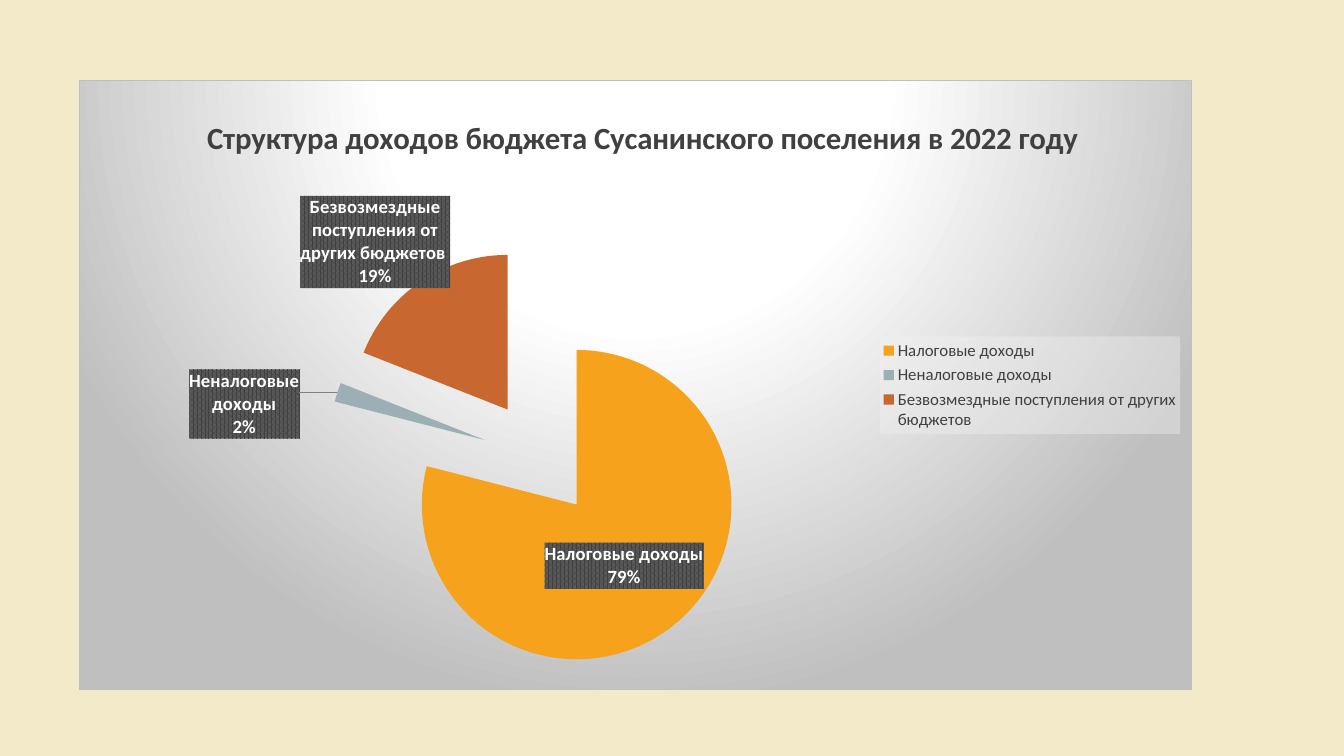
from copy import deepcopy
from dataclasses import dataclass

from lxml.etree import QName
from pptx import Presentation
from pptx.chart.data import CategoryChartData
from pptx.dml.color import RGBColor
from pptx.enum.chart import XL_CHART_TYPE as ChartType
from pptx.enum.chart import XL_LABEL_POSITION as LabelPosition
from pptx.enum.chart import XL_LEGEND_POSITION as LegendPosition
from pptx.oxml import parse_xml
from pptx.oxml.ns import nsdecls, qn
from pptx.util import Inches, Pt

COLOURS = {
    "background": "F2EAC8", "text": "404040", "white": "FFFFFF", "black": "000000",
    "grey": "BFBFBF", "legend": "F2F2F2", "hatch": "595959", "leader": "808080",
    "tax": "F6A21D", "non_tax": "9BAFB5", "grants": "C96731",
}
FONT = "Calibri"
TITLE = "Структура доходов бюджета Сусанинского поселения в 2022 году"
EXPLOSION = 38

CHART_FILL = f"""<a:gradFill><a:gsLst>
  <a:gs pos="0"><a:srgbClr val="{COLOURS['white']}"/></a:gs>
  <a:gs pos="39000"><a:srgbClr val="{COLOURS['white']}"/></a:gs>
  <a:gs pos="100000"><a:srgbClr val="{COLOURS['grey']}"/></a:gs></a:gsLst>
  <a:path path="circle"><a:fillToRect l="50000" t="-80000" r="50000" b="180000"/></a:path>
</a:gradFill>
<a:ln w="9525"><a:solidFill><a:srgbClr val="{COLOURS['grey']}"/></a:solidFill></a:ln>"""
LEGEND_FILL = f"""<a:solidFill><a:srgbClr val="{COLOURS['legend']}">
  <a:alpha val="39000"/></a:srgbClr></a:solidFill>"""
LABEL_FILL = f"""<a:pattFill prst="pct75">
  <a:fgClr><a:srgbClr val="{COLOURS['text']}"/></a:fgClr>
  <a:bgClr><a:srgbClr val="{COLOURS['hatch']}"/></a:bgClr></a:pattFill>"""
LEADER_LINE = f"""<a:ln w="9525"><a:solidFill>
  <a:srgbClr val="{COLOURS['leader']}"/></a:solidFill></a:ln>"""


@dataclass
class Area:
    """Place in the chart, as fractions of its width and height."""
    x: float
    y: float
    width: float | None = None
    height: float | None = None


@dataclass
class Income:
    name: str
    share: int
    colour: str
    label: Area | None = None


INCOMES = [
    Income("Налоговые доходы", 79, "tax"),
    Income("Неналоговые доходы", 2, "non_tax", Area(-0.15, -0.02, 0.1, 0.11)),
    Income("Безвозмездные поступления от других бюджетов ", 19, "grants",
           Area(-0.08, -0.17, 0.14, 0.15)),
]


def colour(name: str) -> RGBColor:
    return RGBColor.from_string(COLOURS[name])


def format_font(font, *, size: float, color: str, bold: bool = False) -> None:
    font.name, font.size, font.bold = FONT, Pt(size), bold
    font.color.rgb = colour(color)


def chart_element(tag: str, content: str = "", attributes: str = ""):
    return parse_xml(f"<c:{tag} {nsdecls('c', 'a')} {attributes}>{content}</c:{tag}>")


def layout_element(area: Area, fixed: bool = True, inner: bool = False):
    """Fixed places count from the chart corner, others from the default place."""
    content = '<c:layoutTarget val="inner"/>' if inner else ""
    if fixed:
        content += '<c:xMode val="edge"/><c:yMode val="edge"/>'
    content += f'<c:x val="{area.x}"/><c:y val="{area.y}"/>'
    if fixed and area.width:
        content += f'<c:w val="{area.width}"/><c:h val="{area.height}"/>'
    return chart_element("layout", f"<c:manualLayout>{content}</c:manualLayout>")


def place(parent, area: Area, after: str | None = None, inner: bool = False) -> None:
    for old_layout in parent.findall(qn("c:layout")):
        parent.remove(old_layout)
    layout = layout_element(area, inner=inner)
    if after:
        parent.find(qn(after)).addnext(layout)
    else:
        parent.insert(0, layout)


def moved_label(labels, index: int, area: Area):
    """Label of one slice with the shared format and its own place and size."""
    label = chart_element("dLbl", f'<c:idx val="{index}"/>')
    label.append(layout_element(area, fixed=False))
    for child in labels:
        if QName(child).localname not in ("dLbl", "showLeaderLines", "leaderLines"):
            label.append(deepcopy(child))
    size = f'<c:w val="{area.width}"/><c:h val="{area.height}"/>'
    label.append(chart_element("extLst", f"""<c:ext
        uri="{{CE6537A1-D6FC-4f65-9D91-7224C49458BB}}"
        xmlns:c15="http://schemas.microsoft.com/office/drawing/2012/chart">
        <c15:layout><c:manualLayout>{size}</c:manualLayout></c15:layout></c:ext>"""))
    return label


def format_title(chart) -> None:
    chart.has_title = True
    paragraph = chart.chart_title.text_frame.paragraphs[0]
    run = paragraph.add_run()
    run.text = TITLE
    format_font(run.font, size=22, color="text", bold=True)
    place(chart.chart_title._element, Area(0.11, 0.05), after="c:tx")


def format_legend(chart) -> None:
    chart.has_legend = True
    legend = chart.legend
    legend.position = LegendPosition.RIGHT
    legend.include_in_layout = False
    format_font(legend.font, size=12, color="text")
    place(legend._element, Area(0.72, 0.42, 0.27, 0.16), after="c:legendPos")
    legend._element.find(qn("c:overlay")).addnext(chart_element("spPr", LEGEND_FILL))


def format_slices(series) -> None:
    for index, income in enumerate(INCOMES):
        fill = series.points[index].format.fill
        fill.solid()
        fill.fore_color.rgb = colour(income.colour)
    explosion = chart_element("explosion", attributes=f'val="{EXPLOSION}"')
    series._element.find(qn("c:tx")).addnext(explosion)


def format_labels(series) -> None:
    data_labels = series.data_labels
    data_labels.show_value = False
    data_labels.show_category_name = True
    data_labels.show_percentage = True
    data_labels.number_format = "0%"
    data_labels.number_format_is_linked = False
    data_labels.position = LabelPosition.CENTER
    format_font(data_labels.font, size=13.3, color="white", bold=True)

    labels = data_labels._element
    labels.find(qn("c:numFmt")).addnext(chart_element("spPr", LABEL_FILL))
    for old_leader in labels.findall(qn("c:showLeaderLines")):
        labels.remove(old_leader)
    labels.append(chart_element("separator", "\n"))
    labels.append(chart_element("showLeaderLines", attributes='val="1"'))
    labels.append(chart_element("leaderLines", f"<c:spPr>{LEADER_LINE}</c:spPr>"))
    moved = [moved_label(labels, index, income.label)
             for index, income in enumerate(INCOMES) if income.label]
    for position, label in enumerate(moved):
        labels.insert(position, label)


def add_income_chart(slide) -> None:
    data = CategoryChartData()
    data.categories = [income.name for income in INCOMES]
    data.add_series(TITLE, [income.share for income in INCOMES])
    frame = slide.shapes.add_chart(ChartType.PIE, Inches(0.78), Inches(0.79),
                                   Inches(11.04), Inches(6.06), data)
    chart = frame.chart
    format_font(chart.font, size=10, color="black")
    format_title(chart)
    format_legend(chart)
    series = chart.plots[0].series[0]
    format_slices(series)
    format_labels(series)
    chart_body = chart._chartSpace.find(qn("c:chart"))
    place(chart_body.find(qn("c:plotArea")), Area(0.22, 0.27, 0.39, 0.7), inner=True)
    chart_body.addnext(chart_element("spPr", CHART_FILL))


def main() -> None:
    presentation = Presentation()
    presentation.slide_width, presentation.slide_height = Inches(13.33), Inches(7.5)
    slide = presentation.slides.add_slide(presentation.slide_layouts[6])
    slide.background.fill.solid()
    slide.background.fill.fore_color.rgb = colour("background")
    add_income_chart(slide)
    presentation.save("out.pptx")


if __name__ == "__main__":
    main()
